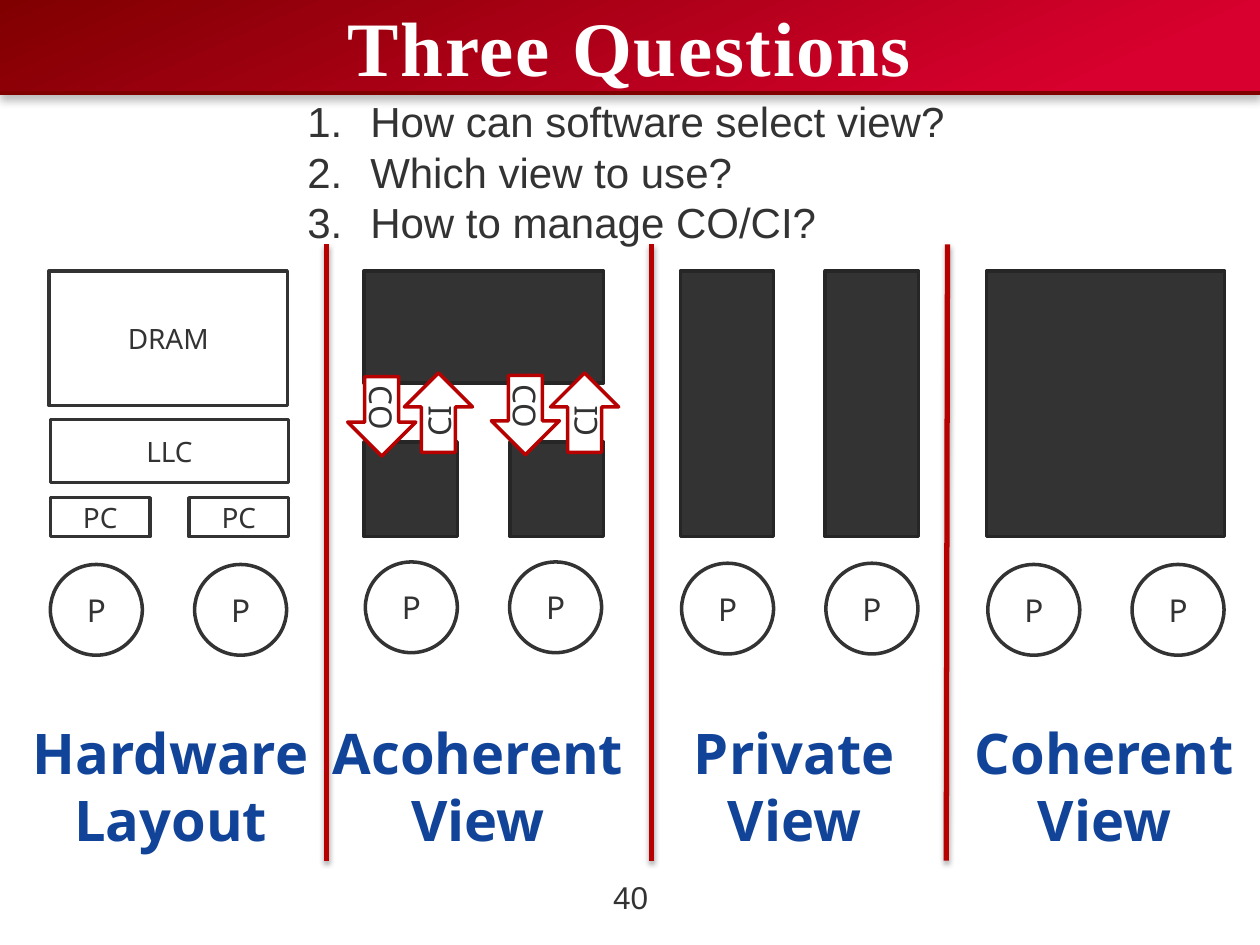
"""Builds the "Three Questions" slide comparing memory views."""
from lxml import etree
from pptx import Presentation
from pptx.dml.color import RGBColor
from pptx.enum.shapes import MSO_CONNECTOR as CONN, MSO_SHAPE as SHAPE
from pptx.enum.text import MSO_ANCHOR as ANCHOR, PP_ALIGN as ALIGN
from pptx.oxml.ns import qn
from pptx.util import Inches, Pt


def rgb(value):
    return RGBColor.from_string(value)


def write(tf, text, size=18, font="Noto Sans", color="333333", bold=False,
          align=ALIGN.CENTER, insets=(0.1, 0.05, 0.1, 0.05), anchor=ANCHOR.TOP,
          wrap=True, vert=None, spacing=None, numbered=False):
    tf.word_wrap = wrap
    tf.vertical_anchor = anchor
    tf.margin_left, tf.margin_top, tf.margin_right, tf.margin_bottom = map(Inches, insets)
    if vert:
        tf._txBody.bodyPr.set("vert", vert)
    for i, line in enumerate(text.split("\n")):
        p = tf.paragraphs[0] if i == 0 else tf.add_paragraph()
        p.alignment = align
        if numbered:
            pPr = p._p.get_or_add_pPr()
            pPr.set("marL", str(Inches(0.5)))
            pPr.set("indent", str(Inches(-0.5)))
            etree.SubElement(pPr, qn("a:buFont"), typeface="+mj-lt")
            etree.SubElement(pPr, qn("a:buAutoNum"), type="arabicPeriod")
        r = p.add_run()
        r.text = line
        r.font.name, r.font.size, r.font.bold = font, Pt(size), bold
        r.font.color.rgb = rgb(color)
        if spacing:
            r._r.get_or_add_rPr().set("spc", str(spacing * 100))


class Deck:
    """Holds the style and the current slide."""
    INK, EDGE, RED, BLUE, WHITE = "333333", "262626", "B70101", "114499", "FFFFFF"
    MAROON, CRIMSON = "800000", "D8002E"

    def __init__(self, prs):
        self.s = prs.slides.add_slide(prs.slide_layouts[6])

    def shape(self, kind, x, y, w, h, fill=WHITE, line=INK, text=None, **fmt):
        sp = self.s.shapes.add_shape(kind, *map(Inches, (x, y, w, h)))
        sp.shadow.inherit = False
        sp.fill.solid()
        sp.fill.fore_color.rgb = rgb(fill)
        sp.line.color.rgb = rgb(line)
        sp.line.width = Pt(2)
        if text:
            write(sp.text_frame, text, anchor=ANCHOR.MIDDLE, **fmt)
        return sp

    def box(self, x, y, w, h, text):
        self.shape(SHAPE.RECTANGLE, x, y, w, h, text=text, size=16,
                   insets=(0, 0.05, 0, 0.05))

    def memory(self, x, y, w, h):
        self.shape(SHAPE.RECTANGLE, x, y, w, h, self.INK, self.EDGE)

    def processor(self, x, y):
        self.shape(SHAPE.OVAL, x, y, 0.73, 0.72, text="P")

    def arrow(self, kind, x, y, text, vert):
        self.shape(kind, x, y, 0.54, 0.63, line=self.RED, text=text,
                   insets=(0, 0, 0, 0), vert=vert)

    def shadow(self, effects, alpha, blur, dist):
        outer = etree.SubElement(effects, qn("a:outerShdw"), blurRad=str(Pt(blur)),
                                 dist=str(Pt(dist)), dir="5400000", rotWithShape="0")
        color = etree.SubElement(outer, qn("a:srgbClr"), val="000000")
        etree.SubElement(color, qn("a:alpha"), val=str(alpha * 1000))

    def line(self, x1, y1, x2, y2, color, width, shadow=None):
        cn = self.s.shapes.add_connector(CONN.STRAIGHT, *map(Inches, (x1, y1, x2, y2)))
        cn.line.color.rgb = rgb(color)
        cn.line.width = Pt(width)
        effects = etree.SubElement(cn._element.spPr, qn("a:effectLst"))
        if shadow:
            self.shadow(effects, *shadow)

    def banner(self, w, h):
        sp = self.shape(SHAPE.RECTANGLE, 0, 0, w, h)
        sp.line.fill.background()
        sp.fill.gradient()
        sp.fill.gradient_angle = 360 - 66
        stops = zip(sp.fill.gradient_stops, (0, 0.87), (self.MAROON, self.CRIMSON))
        for stop, position, color in stops:
            stop.position = position
            stop.color.rgb = rgb(color)
        self.shadow(sp._element.spPr.find(qn("a:effectLst")), 25, 5, 3.8)
        self.line(0, h, w, h, self.MAROON, 2)

    def text(self, x, y, w, h, text, **fmt):
        tb = self.s.shapes.add_textbox(*map(Inches, (x, y, w, h)))
        write(tb.text_frame, text, **fmt)


def main():
    prs = Presentation()
    prs.slide_width, prs.slide_height = Inches(10), Inches(7.5)
    deck = Deck(prs)

    deck.banner(10.01, 0.74)
    deck.text(4.61, 6.92, 0.79, 0.4, "40", font="Arial")
    deck.text(0, 0, 10, 0.73, "Three Questions", size=44, font="Times New Roman",
              color=deck.WHITE, bold=True, spacing=1, insets=(0.1, 0, 0.1, 0.05))

    for x in (0.4, 1.5):
        deck.box(x, 3.95, 0.79, 0.31, "PC")
    deck.box(0.39, 2.15, 1.89, 1.07, "DRAM")
    deck.box(0.4, 3.33, 1.89, 0.5, "LLC")

    for x, y in ((0.4, 4.48), (2.9, 4.46), (5.41, 4.47), (7.84, 4.48)):
        for dx in (0, 1.145):
            deck.processor(x + dx, y)

    deck.memory(7.83, 2.15, 1.89, 2.11)
    for x in (5.4, 6.55):
        deck.memory(x, 2.15, 0.74, 2.11)
    for x in (2.89, 4.05):
        deck.memory(x, 3.51, 0.74, 0.75)
    deck.memory(2.89, 2.15, 1.9, 0.89)

    for x, y in ((2.76, 2.99), (3.9, 2.98)):
        deck.arrow(SHAPE.DOWN_ARROW, x, y, "CO", "vert")
    for x in (3.21, 4.37):
        deck.arrow(SHAPE.UP_ARROW, x, 2.96, "CI", "vert270")

    for top, bottom in ((2.59, 2.59), (5.17, 5.17), (7.52, 7.51)):
        deck.line(top, 1.94, bottom, 6.83, deck.RED, 3, shadow=(35, 3.1, 1.8))

    for x, w, label in ((0.11, 2.49, "Hardware\nLayout"), (2.44, 2.71, "Acoherent\nView"),
                        (5.06, 2.49, "Private\nView"), (7.52, 2.49, "Coherent\nView")):
        deck.text(x, 5.65, w, 1.18, label, size=32, color=deck.BLUE, bold=True)

    questions = "How can software select view?\nWhich view to use?\nHow to manage CO/CI?"
    deck.text(2.34, 0.71, 5.31, 1.31, questions, size=24, font="Arial",
              align=ALIGN.LEFT, wrap=False, numbered=True)

    prs.save("out.pptx")


if __name__ == "__main__":
    main()
